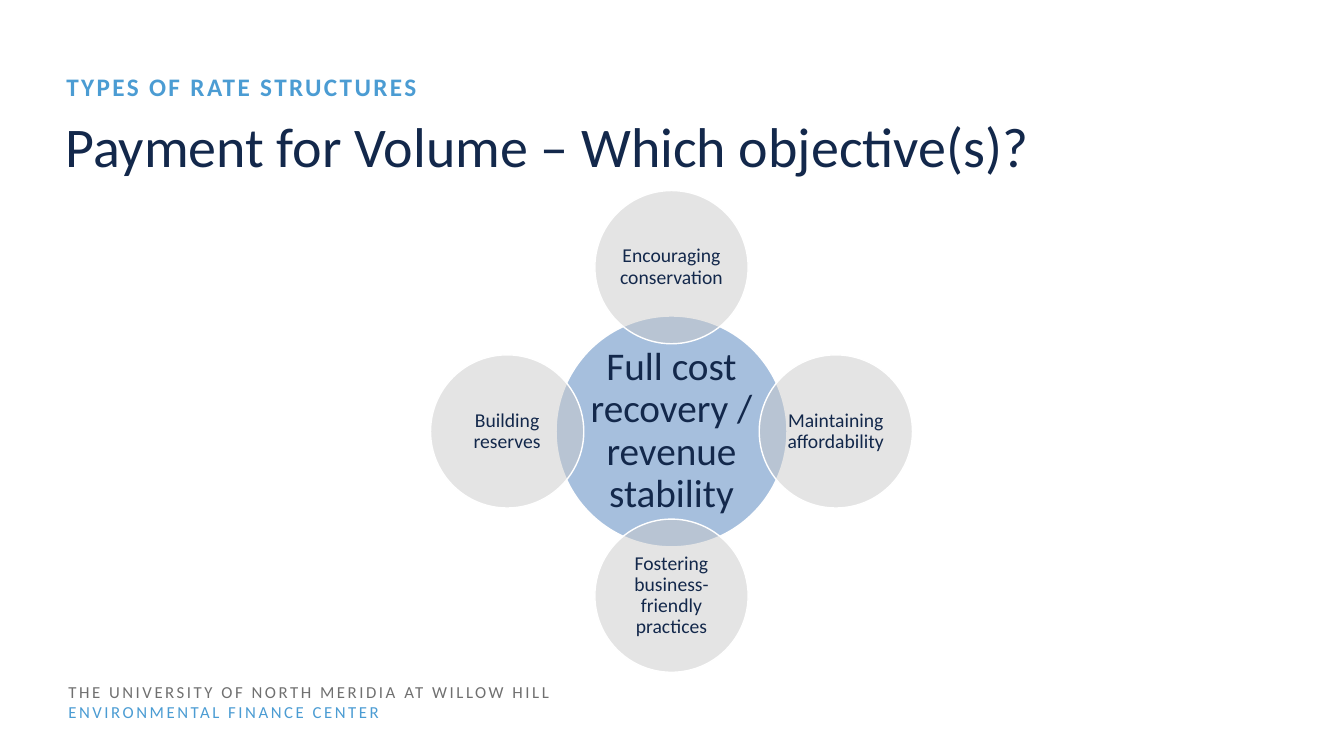
"""Build the slide on objectives of payment for volume."""
from dataclasses import dataclass
from math import cos, pi, sin

from pptx import Presentation
from pptx.dml.color import RGBColor
from pptx.enum.shapes import MSO_SHAPE
from pptx.enum.text import MSO_ANCHOR, PP_ALIGN
from pptx.oxml.ns import qn
from pptx.oxml.xmlchemy import OxmlElement
from pptx.slide import Slide
from pptx.text.text import TextFrame
from pptx.util import Inches, Pt

NAVY = RGBColor(0x13, 0x28, 0x4B)
SKY = RGBColor(0x4B, 0x9C, 0xD3)
GRAY = RGBColor(0x70, 0x70, 0x70)
BLUE = RGBColor(0x4F, 0x81, 0xBD)
SILVER = RGBColor(0xCA, 0xCA, 0xCA)
WHITE = RGBColor(0xFF, 0xFF, 0xFF)

MID_X, MID_Y = 6.66, 4.28
ORBIT = 1.63


@dataclass
class Line:
    text: str
    size: int
    color: RGBColor
    bold: bool = False
    track: float = 0
    gap: float = 1.0


@dataclass
class Label:
    left: float
    top: float
    width: float
    height: float
    anchor: MSO_ANCHOR
    lines: list[Line]


@dataclass
class Circle:
    text: str
    x: float
    y: float
    width: float
    fill: RGBColor
    size: int


LABELS = [
    Label(0.58, 6.71, 7.83, 0.5, MSO_ANCHOR.MIDDLE, [
        Line("THE UNIVERSITY OF NORTH MERIDIA AT WILLOW HILL", 12, GRAY, track=1.8),
        Line("ENVIRONMENTAL FINANCE CENTER", 12, SKY, track=1.8),
    ]),
    Label(0.55, 1.06, 12.24, 0.79, MSO_ANCHOR.TOP, [
        Line("Payment for Volume – Which objective(s)?", 40, NAVY),
    ]),
    Label(0.56, 0.69, 12.24, 0.27, MSO_ANCHOR.TOP, [
        Line("TYPES OF RATE STRUCTURES", 18, SKY, True, 1.7, 0.9),
    ]),
]

GOALS = [
    "Encouraging conservation",
    "Maintaining affordability",
    "Fostering business-friendly practices",
    "Building reserves",
]


def apply(target: object, values: dict[str, object]) -> None:
    for name, value in values.items():
        setattr(target, name, value)


def write(frame: TextFrame, lines: list[Line], align: PP_ALIGN) -> None:
    for index, line in enumerate(lines):
        para = frame.add_paragraph() if index else frame.paragraphs[0]
        apply(para, {"alignment": align, "line_spacing": line.gap})
        run = para.add_run()
        run.text = line.text
        apply(run.font, {"name": "Calibri", "size": Pt(line.size), "bold": line.bold})
        run.font.color.rgb = line.color


def add_label(slide: Slide, label: Label) -> None:
    box = slide.shapes.add_textbox(
        Inches(label.left), Inches(label.top), Inches(label.width), Inches(label.height)
    )
    apply(box.text_frame, {"word_wrap": True, "vertical_anchor": label.anchor})
    write(box.text_frame, label.lines, PP_ALIGN.LEFT)
    for props, line in zip(box.element.iter(qn("a:rPr")), label.lines):
        props.set("spc", str(round(line.track * 100)))


def add_circle(slide: Slide, circle: Circle) -> None:
    half = circle.width / 2
    disc = slide.shapes.add_shape(
        MSO_SHAPE.OVAL, Inches(circle.x - half), Inches(circle.y - half),
        Inches(circle.width), Inches(circle.width)
    )
    disc.shadow.inherit = False
    disc.fill.solid()
    disc.fill.fore_color.rgb = circle.fill
    alpha = OxmlElement("a:alpha")
    alpha.set("val", "50000")
    next(disc.element.iter(qn("a:srgbClr"))).append(alpha)
    disc.line.color.rgb = WHITE
    disc.line.width = Pt(1)
    sides = ("left", "top", "right", "bottom")
    apply(disc.text_frame, {f"margin_{side}": 0 for side in sides})
    apply(disc.text_frame, {"word_wrap": True, "vertical_anchor": MSO_ANCHOR.MIDDLE})
    write(disc.text_frame, [Line(circle.text, circle.size, NAVY, gap=0.9)], PP_ALIGN.CENTER)


def main() -> None:
    deck = Presentation()
    apply(deck, {"slide_width": Inches(13.33), "slide_height": Inches(7.5)})
    slide = deck.slides.add_slide(deck.slide_layouts[6])
    for label in LABELS:
        add_label(slide, label)
    hub = "Full cost recovery / revenue stability"
    add_circle(slide, Circle(hub, MID_X, MID_Y, 2.29, BLUE, 28))
    for index, goal in enumerate(GOALS):
        angle = 2 * pi * index / len(GOALS)
        x, y = MID_X + ORBIT * sin(angle), MID_Y - ORBIT * cos(angle)
        add_circle(slide, Circle(goal, x, y, 1.52, SILVER, 14))
    deck.save("out.pptx")


if __name__ == "__main__":
    main()
